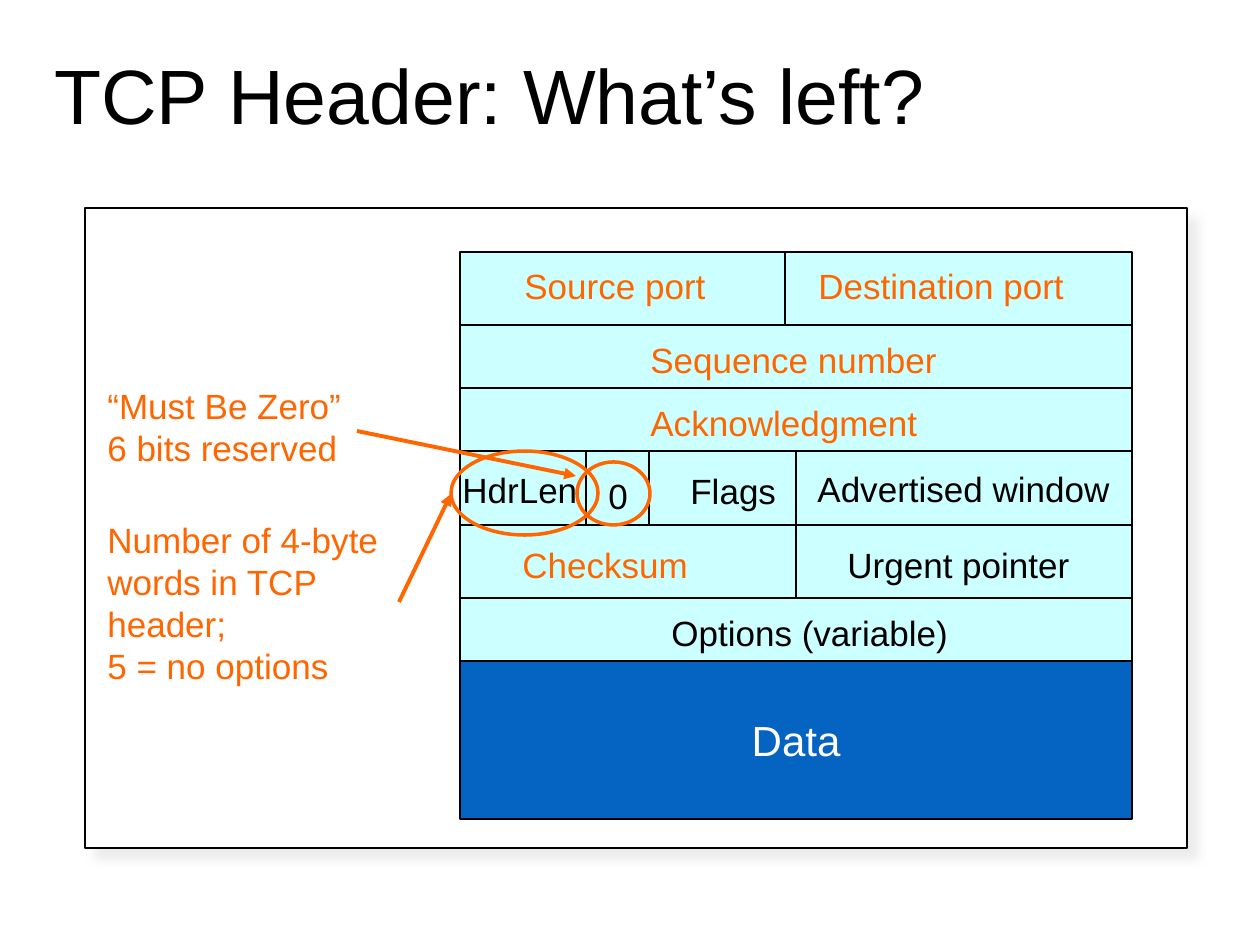
from lxml.etree import SubElement
from pptx import Presentation
from pptx.dml.color import RGBColor
from pptx.enum.shapes import MSO_CONNECTOR, MSO_SHAPE
from pptx.enum.text import MSO_ANCHOR, MSO_AUTO_SIZE, PP_ALIGN
from pptx.oxml.ns import qn
from pptx.util import Emu, Pt

COLORS = {"black": "000000", "white": "FFFFFF", "cell": "CCFFFF",
          "data": "0563C1", "accent": "FF6600", "shadow": "E7E6E6"}


def px(n):
    """Turn px into EMU at 126 px to the inch."""
    return Emu(round(n * 914400 / 126))


def rgb(name):
    """Look up a colour by name."""
    return RGBColor.from_string(COLORS[name])


def add_block(s, box, fill=None, line="black", width=0.75, kind=MSO_SHAPE.RECTANGLE):
    """Add an outlined shape, hollow when no fill is named."""
    sp = s.shapes.add_shape(kind, *map(px, box))
    sp.shadow.inherit = False
    if fill:
        sp.fill.solid()
        sp.fill.fore_color.rgb = rgb(fill)
    else:
        sp.fill.background()
    sp.line.color.rgb = rgb(line)
    sp.line.width = Pt(width)
    return sp


def add_line(s, start, end, color="black", width=0.75, arrow=False):
    """Add a straight line, with an arrowhead at its end if asked."""
    c = s.shapes.add_connector(MSO_CONNECTOR.STRAIGHT, *map(px, start + end))
    c.line.color.rgb = rgb(color)
    c.line.width = Pt(width)
    sp_pr = c.element.spPr
    if arrow:
        SubElement(sp_pr.find(qn("a:ln")), qn("a:tailEnd"), type="triangle")
    SubElement(sp_pr, qn("a:effectLst"))


def write(tf, lines, size, color):
    """Write lines of one paragraph into a text frame."""
    p = tf.paragraphs[0]
    for i, line in enumerate(lines):
        if i:
            p.add_line_break()
        r = p.add_run()
        r.text = line
        r.font.size = Pt(size)
        r.font.name = "Arial"
        r.font.color.rgb = rgb(color)
    return p


def add_text(s, box, lines, color, size=20, wrap=True, fill=None):
    """Add a text box and return its text frame."""
    sp = s.shapes.add_textbox(*map(px, box))
    if fill:
        sp.fill.solid()
        sp.fill.fore_color.rgb = rgb(fill)
    tf = sp.text_frame
    tf.word_wrap = wrap
    tf.auto_size = MSO_AUTO_SIZE.SHAPE_TO_FIT_TEXT
    write(tf, lines, size, color)
    return tf


def add_title(s, box):
    """Place the slide title."""
    tf = add_text(s, box, ["TCP Header: What’s left?"], "black", 44)
    tf.auto_size = MSO_AUTO_SIZE.NONE
    tf.vertical_anchor = MSO_ANCHOR.MIDDLE
    tf.paragraphs[0].line_spacing = 0.9


def add_panel(s, box):
    """Place the white panel with its soft shadow."""
    sp = add_block(s, box, "white")
    effects = sp.element.spPr.find(qn("a:effectLst"))
    shadow = SubElement(effects, qn("a:outerShdw"), blurRad=str(Pt(5)),
                        dist=str(Pt(8.5)), dir="2700000", algn="tl", rotWithShape="0")
    color = SubElement(shadow, qn("a:srgbClr"), val=COLORS["shadow"])
    SubElement(color, qn("a:alpha"), val="75000")


def add_header(s, box):
    """Place the rows of the TCP segment with their field labels."""
    left, top, width, height = box
    half = width // 2
    rows = [(73, [325, width - 325]), (63, [width]), (63, [width]),
            (74, [half, half]), (73, [half, half]), (63, [width])]
    y = top
    for row_height, widths in rows:
        x = left
        for cell_width in widths:
            add_block(s, (x, y, cell_width, row_height), "cell")
            x += cell_width
        y += row_height
    data = add_block(s, (left, y, width, top + height - y), "data")
    tf = data.text_frame
    tf.word_wrap = False
    tf.vertical_anchor = MSO_ANCHOR.MIDDLE
    write(tf, ["Data"], 24, "white").alignment = PP_ALIGN.CENTER

    labels = [("Source port", 52, 6, 209, "accent"),
              ("Destination port", 346, 6, 273, "accent"),
              ("Sequence number", 178, 80, 315, "accent"),
              ("Acknowledgment", 178, 143, 296, "accent"),
              ("Advertised window", 345, 209, 320, "black"),
              ("Flags", 218, 211, 113, "black"),
              ("0", 136, 216, 46, "black"),
              ("Checksum", 50, 285, 196, "accent"),
              ("Urgent pointer", 375, 285, 250, "black"),
              ("Options (variable)", 199, 353, 308, "black")]
    for text, x, y, w, color in labels:
        add_text(s, (left + x, top + y, w, 54), [text], color, wrap=False, fill="cell")
    add_text(s, (left - 10, top + 210, 147, 54), ["HdrLen"], "black")
    for x in (126, 189):
        add_line(s, (left + x, top + 199), (left + x, top + 273))


def add_notes(s, box):
    """Place the side notes, each with a ring and an arrow to it."""
    left, top = box[:2]
    notes = [(["“Must Be Zero”", "6 bits reserved"], (10, 170, 305, 97),
              (492, 254, 73, 63), (272, 223), (491, 268)),
             (["Number of 4-byte words in TCP header;", "5 = no options"],
              (10, 304, 305, 180), (366, 243, 147, 84), (314, 394), (366, 286))]
    for lines, (x, y, w, h), (rx, ry, rw, rh), (x1, y1), (x2, y2) in notes:
        add_text(s, (left + x, top + y, w, h), lines, "accent")
        add_block(s, (left + rx, top + ry, rw, rh), line="accent", width=2,
                  kind=MSO_SHAPE.OVAL)
        add_line(s, (left + x1, top + y1), (left + x2, top + y2), "accent", 2.25, True)


def main():
    """Build the slide and save it."""
    prs = Presentation()
    prs.slide_width, prs.slide_height = px(1260), px(945)
    s = prs.slides.add_slide(prs.slide_layouts[6])
    panel = (85, 208, 1102, 640)
    add_panel(s, panel)
    add_title(s, (42, 52, 1111, 95))
    add_header(s, (460, 252, 672, 567))
    add_notes(s, panel)
    prs.save("out.pptx")


if __name__ == "__main__":
    main()
